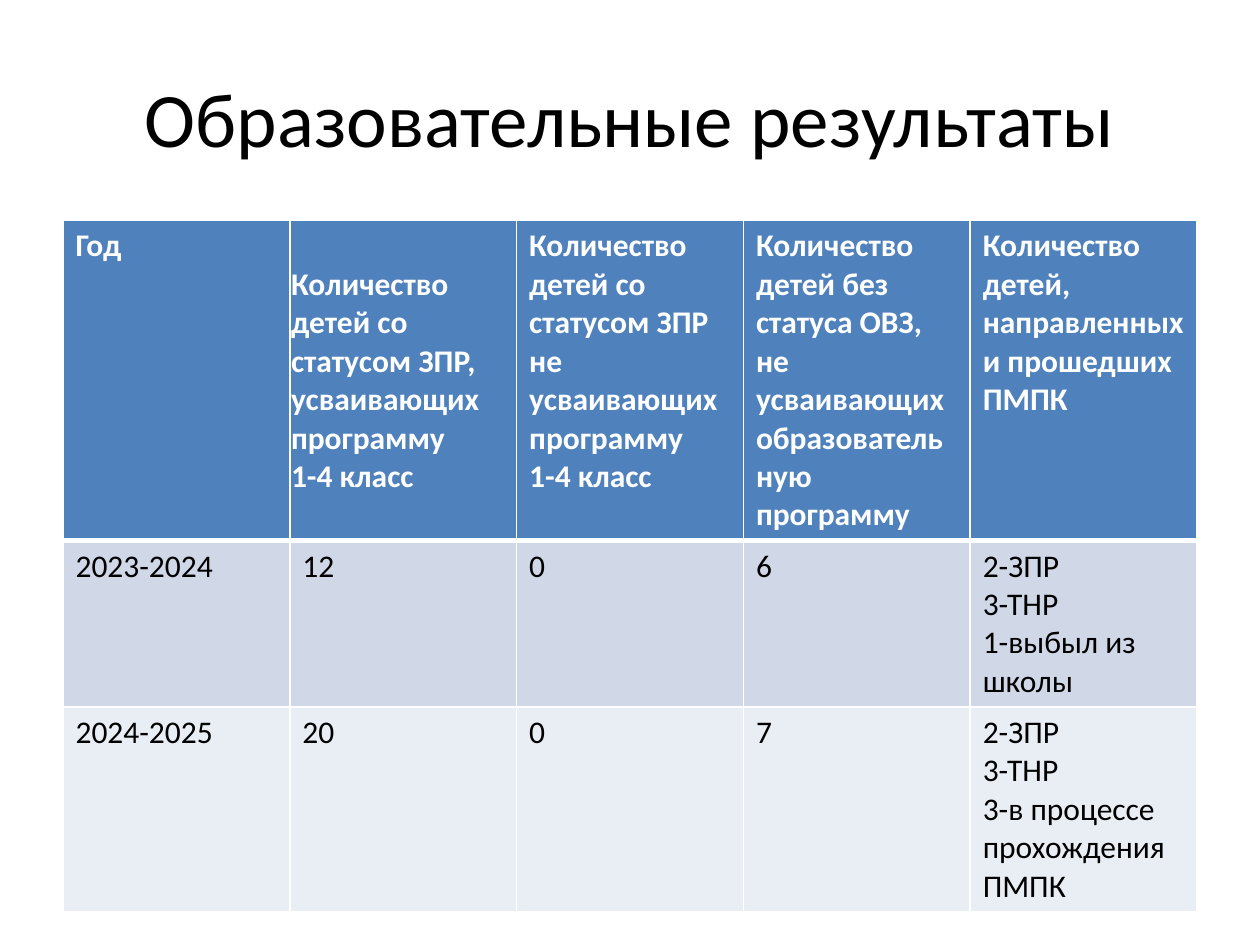
from lxml.etree import SubElement
from pptx import Presentation
from pptx.dml.color import RGBColor
from pptx.enum.text import MSO_ANCHOR, PP_ALIGN
from pptx.oxml.ns import qn
from pptx.util import Inches, Pt

FONT = "Calibri"
WHITE, BLACK = "FFFFFF", "000000"
ROW_FILLS = ["4F81BD", "D0D8E8", "E9EDF4"]
ROW_HEIGHTS = [2.5, 1.3, 1.6]
COL_WIDTH = 1.8

# Line breaks separate the paragraphs of a cell
ROWS = [
    ["Год",
     "Количество детей со статусом ЗПР, усваивающих программу\n1-4 класс",
     "Количество детей со статусом ЗПР не усваивающих программу\n1-4 класс",
     "Количество детей без статуса ОВЗ, не усваивающих образовательную программу",
     "Количество детей, направленных и прошедших ПМПК"],
    ["2023-2024", "12", "0", "6", "2-ЗПР\n3-ТНР\n1-выбыл из школы"],
    ["2024-2025", "20", "0", "7",
     "2-ЗПР\n3-ТНР\n3-в процессе прохождения ПМПК"],
]


def rgb(color):
    return RGBColor.from_string(color)


def style_text(tf, size, color, bold=False, align=PP_ALIGN.LEFT):
    for p in tf.paragraphs:
        p.alignment = align
        p.font.name = FONT
        p.font.size = Pt(size)
        p.font.bold = bold
        p.font.color.rgb = rgb(color)


def set_borders(cell, bottom=1):
    tc_pr = cell._tc.get_or_add_tcPr()
    for side, width in (("L", 1), ("R", 1), ("T", 1), ("B", bottom)):
        ln = SubElement(tc_pr, qn(f"a:ln{side}"), w=str(Pt(width)))
        fill = SubElement(ln, qn("a:solidFill"))
        SubElement(fill, qn("a:srgbClr"), val=WHITE)


def add_title(s, text):
    sp = s.shapes.title
    sp.left, sp.top = Inches(0.5), Inches(0.3)
    sp.width, sp.height = Inches(9), Inches(1.25)
    tf = sp.text_frame
    tf.text = text
    tf.vertical_anchor = MSO_ANCHOR.MIDDLE
    style_text(tf, 44, BLACK, align=PP_ALIGN.CENTER)


def add_results_table(s):
    n_cols = len(ROWS[0])
    table = s.shapes.add_table(
        len(ROWS), n_cols, Inches(0.5), Inches(1.75),
        Inches(COL_WIDTH * n_cols), Inches(sum(ROW_HEIGHTS))).table
    for col in table.columns:
        col.width = Inches(COL_WIDTH)
    for i, texts in enumerate(ROWS):
        header = i == 0
        table.rows[i].height = Inches(ROW_HEIGHTS[i])
        for j, text in enumerate(texts):
            cell = table.cell(i, j)
            cell.text = text
            style_text(cell.text_frame, 18, WHITE if header else BLACK, header)
            # A thicker line sets the header off from the body
            set_borders(cell, bottom=3 if header else 1)
            cell.fill.solid()
            cell.fill.fore_color.rgb = rgb(ROW_FILLS[i])

    # The second heading is centred vertically with narrow margins
    cell = table.cell(0, 1)
    cell.vertical_anchor = MSO_ANCHOR.MIDDLE
    cell.margin_left = cell.margin_right = Inches(0.01)
    cell.margin_top = cell.margin_bottom = Inches(0.01)


def main():
    prs = Presentation()
    prs.slide_width, prs.slide_height = Inches(10), Inches(7.5)
    s = prs.slides.add_slide(prs.slide_layouts[5])
    add_title(s, "Образовательные результаты")
    add_results_table(s)
    prs.save("out.pptx")


if __name__ == "__main__":
    main()
